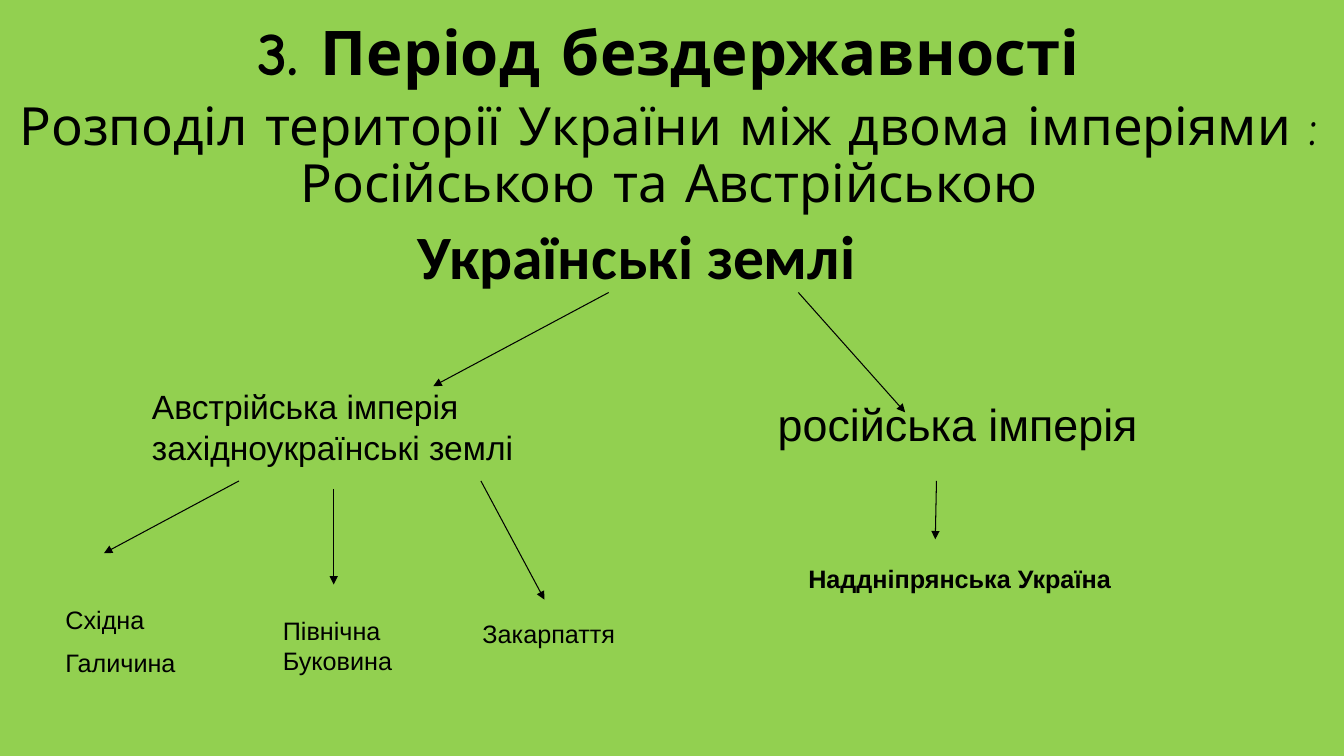
from lxml.etree import SubElement
from pptx import Presentation
from pptx.dml.color import RGBColor
from pptx.enum.shapes import MSO_CONNECTOR as Connector
from pptx.enum.text import MSO_ANCHOR as Anchor, MSO_AUTO_SIZE as AutoSize, PP_ALIGN as Align
from pptx.oxml.ns import qn
from pptx.util import Cm, Pt

GREEN = RGBColor(0x92, 0xD0, 0x50)
BLACK = RGBColor(0, 0, 0)


def write_text(shape, text, size, font="Arial", bold=False, align=Align.LEFT,
               anchor=Anchor.TOP, line_spacing=None, space_before=0,
               margins=(0.25, 0.13), wrap=True):
    """Fill a shape with text, one paragraph for each line."""
    frame = shape.text_frame
    frame.text = text
    frame.word_wrap = wrap
    frame.auto_size = AutoSize.NONE
    frame.vertical_anchor = anchor
    frame.margin_left = frame.margin_right = Cm(margins[0])
    frame.margin_top = frame.margin_bottom = Cm(margins[1])
    for paragraph in frame.paragraphs:
        paragraph.alignment = align
        paragraph.line_spacing = line_spacing
        paragraph.space_before = Pt(space_before)
        for run in paragraph.runs:
            run.font.name = font
            run.font.size = Pt(size)
            run.font.bold = bold
            run.font.color.rgb = BLACK


def move(shape, left, top, width, height):
    shape.left, shape.top = Cm(left), Cm(top)
    shape.width, shape.height = Cm(width), Cm(height)


def add_text(slide, box, text, size, **text_format):
    shape = slide.shapes.add_textbox(*map(Cm, box))
    write_text(shape, text, size, **text_format)


def add_arrow(slide, start, end):
    arrow = slide.shapes.add_connector(Connector.STRAIGHT, *map(Cm, (*start, *end)))
    arrow.line.color.rgb = BLACK
    arrow.line.width = Pt(0.75)
    SubElement(arrow.line._get_or_add_ln(), qn("a:tailEnd"), type="triangle")
    SubElement(arrow._element.spPr, qn("a:effectLst"))


def add_heading(slide, left, top, width):
    """Title and the statement below it."""
    centred = dict(font="Comic Neue", align=Align.CENTER, anchor=Anchor.MIDDLE,
                   line_spacing=0.9, margins=(0, 0))
    title = slide.shapes.title
    move(title, left + 4.77, top, 23.8, 1.8)
    write_text(title, "3. Період бездержавності", 44, bold=True, **centred)
    add_text(slide, (left, top + 1.6, width, 3.68),
             "Розподіл території України між двома імперіями : Російською та Австрійською",
             37.6, **centred)


def add_root(slide, left, top, width, height):
    """Root of the tree with arrows to its two branches."""
    root = slide.placeholders[1]
    move(root, left, top, width, height)
    write_text(root, "Українські землі", 44, font="Calibri", bold=True, align=Align.CENTER,
               anchor=Anchor.MIDDLE, line_spacing=0.9, margins=(0, 0))
    properties = root.text_frame.paragraphs[0]._p.get_or_add_pPr()
    properties.set("marL", "0")
    properties.set("indent", "0")
    SubElement(properties, qn("a:buNone"))
    bottom = top + 1.72
    add_arrow(slide, (left + 5.84, bottom), (left + 1.42, bottom + 2.36))
    add_arrow(slide, (left + 10.62, bottom), (left + 13.31, bottom + 3.02))


def add_branch(slide, left, top, name, name_box, size, lands):
    """An empire and, under arrows, the lands it held."""
    def place(x, y, *extent):
        return (left + x, top + y, *extent)

    add_text(slide, place(*name_box), name, size)
    for land, land_box, start, end, land_format in lands:
        add_arrow(slide, place(*start), place(*end))
        add_text(slide, place(*land_box), land, 18, **land_format)


def main():
    presentation = Presentation()
    presentation.slide_width, presentation.slide_height = Cm(33.87), Cm(19.05)
    slide = presentation.slides.add_slide(presentation.slide_layouts[1])
    slide.background.fill.solid()
    slide.background.fill.fore_color.rgb = GREEN

    add_heading(slide, 0.18, 0.51, 33.38)
    add_root(slide, 9.5, 5.65, 13.1, 1.8)

    # Land: name, box, arrow start, arrow end, text format
    add_branch(slide, 1.4, 9.6, "Австрійська імперія\nзахідноукраїнські землі",
               (2.18, 0, 11.43, 2.31), 24, [
                   ("Східна\nГаличина", (0, 5.51, 3.61, 2.08),
                    (4.62, 2.52), (1.22, 4.34), {"space_before": 9}),
                   ("Північна Буковина", (5.48, 5.77, 3.61, 1.78),
                    (7.01, 2.72), (7.01, 5.13), {}),
                   ("Закарпаття", (10.51, 5.84, 4.19, 1.02),
                    (10.72, 2.52), (12.32, 5.51), {}),
               ])
    add_branch(slide, 19.35, 9.86, "російська імперія", (0, 0, 14.5, 1.63), 32, [
        ("Наддніпрянська Україна", (0.77, 4.21, 8.13, 1.78),
         (4.25, 2.26), (4.22, 3.73), {"bold": True, "wrap": False}),
    ])
    presentation.save("out.pptx")


if __name__ == "__main__":
    main()
